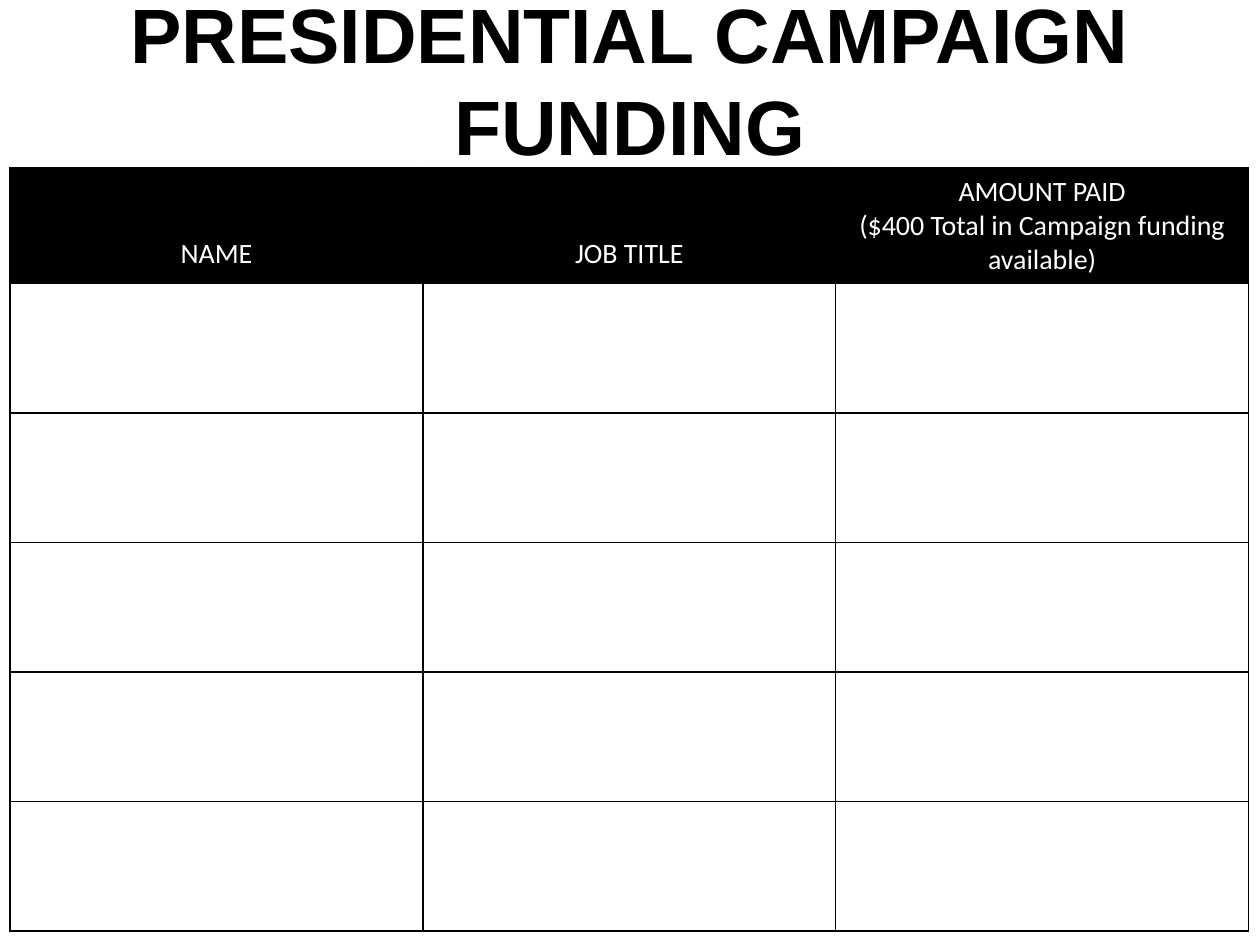
from lxml import etree
from pptx import Presentation
from pptx.dml.color import RGBColor
from pptx.enum import text
from pptx.oxml.ns import qn
from pptx.util import Inches, Pt

BLACK = RGBColor(0, 0, 0)
WHITE = RGBColor(255, 255, 255)

HEADERS = [
    ["NAME"],
    ["JOB TITLE"],
    ["AMOUNT PAID", "($400 Total in Campaign funding available)"],
]
ROWS = 6
TABLE_W, TABLE_H, HEADER_H = Inches(9.83), Inches(6.06), Inches(0.92)


def set_borders(cell, color, width):
    tcPr = cell._tc.get_or_add_tcPr()
    for i, side in enumerate(("a:lnL", "a:lnR", "a:lnT", "a:lnB")):
        ln = etree.Element(qn(side), w=str(width))
        fill = etree.SubElement(ln, qn("a:solidFill"))
        etree.SubElement(fill, qn("a:srgbClr"), val=str(color))
        tcPr.insert(i, ln)


prs = Presentation()
prs.slide_width, prs.slide_height = Inches(10), Inches(7.5)
s = prs.slides.add_slide(prs.slide_layouts[6])

# Title
tf = s.shapes.add_textbox(0, 0, Inches(10), Inches(1.25)).text_frame
tf.word_wrap = True
tf.vertical_anchor = text.MSO_ANCHOR.MIDDLE
p = tf.paragraphs[0]
p.text = "PRESIDENTIAL CAMPAIGN FUNDING"
p.alignment = text.PP_ALIGN.CENTER
p.font.name, p.font.size, p.font.bold = "Arial", Pt(44), True
p.font.color.rgb = BLACK

# Funding table: header row and equal blank rows
table = s.shapes.add_table(ROWS, len(HEADERS), Inches(0.08), Inches(1.33),
                           TABLE_W, TABLE_H).table
for i, row in enumerate(table.rows):
    row.height = (TABLE_H - HEADER_H) // (ROWS - 1) if i else HEADER_H
    for cell in row.cells:
        cell.fill.solid()
        cell.fill.fore_color.rgb = WHITE if i else BLACK
        set_borders(cell, BLACK, Pt(1))

# Header text
for cell, lines in zip(table.rows[0].cells, HEADERS):
    cell.vertical_anchor = text.MSO_ANCHOR.BOTTOM
    if len(lines) == 1:
        cell.margin_bottom = Inches(0.1)
    cell.text = "\n".join(lines)
    for p in cell.text_frame.paragraphs:
        p.alignment = text.PP_ALIGN.CENTER
        p.font.name, p.font.size, p.font.bold = "Calibri", Pt(16), False
        p.font.color.rgb = WHITE

prs.save("out.pptx")
